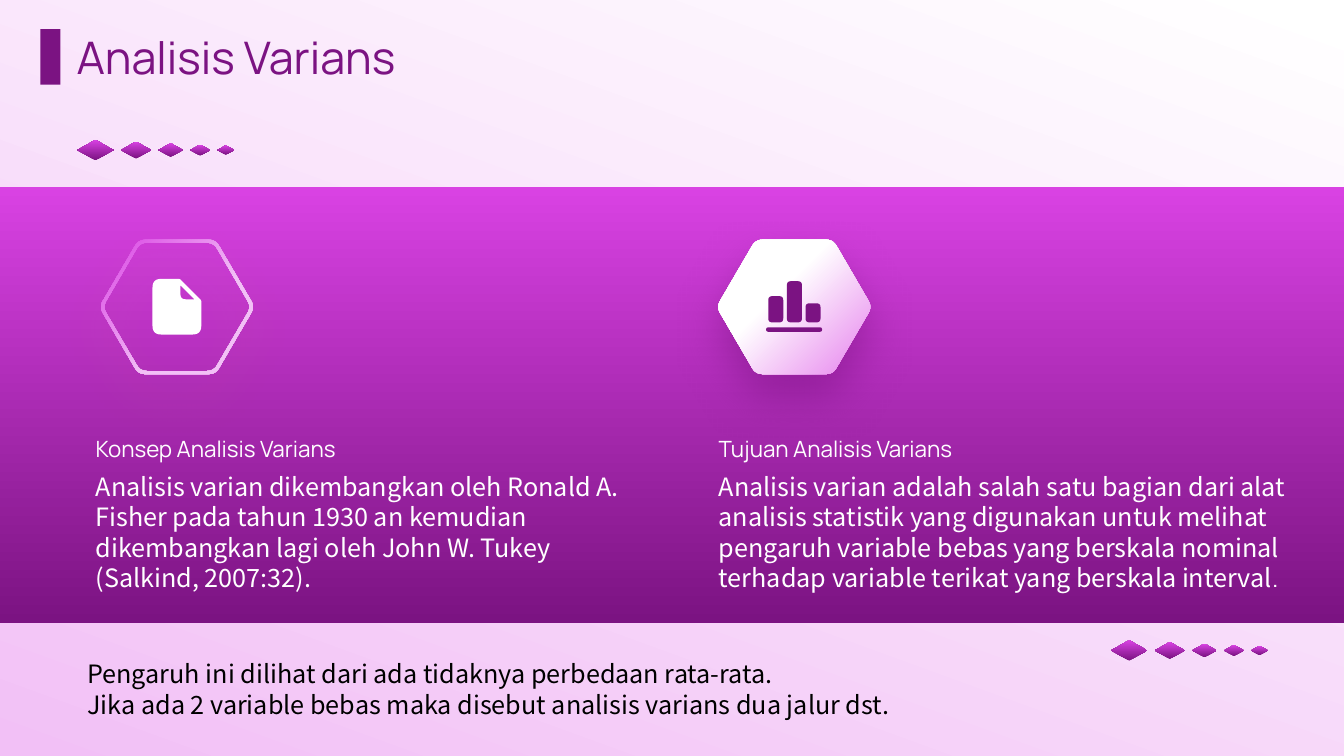
from dataclasses import dataclass

from lxml import etree
from pptx import Presentation
from pptx.dml.color import RGBColor
from pptx.enum.shapes import MSO_SHAPE
from pptx.enum.text import MSO_ANCHOR
from pptx.oxml.ns import qn
from pptx.util import Pt

RECT, DIAMOND = MSO_SHAPE.RECTANGLE, MSO_SHAPE.DIAMOND
TOP, MIDDLE, BOTTOM = MSO_ANCHOR.TOP, MSO_ANCHOR.MIDDLE, MSO_ANCHOR.BOTTOM
HEAD, BODY = "Manrope", "Noto Sans CJK SC"
DARK, PINK, PALE, WHITE, BLACK = "7B1382", "D942E3", "F2C0F6", "FFFFFF", "000000"
UNITS = 100  # outline units per point

Corner = tuple[float, float, float]  # x, y, length cut off each side


@dataclass
class Topic:
    left: float
    width: float
    head: str
    body: str
    tail: str = ""


TOPICS = [
    Topic(68.4, 377.3, "Konsep Analisis Varians",
          "Analisis varian dikembangkan oleh Ronald A. Fisher pada tahun 1930 an "
          "kemudian dikembangkan lagi oleh John W. Tukey (Salkind, 2007:32)."),
    Topic(513.4, 411.1, "Tujuan Analisis Varians",
          "Analisis varian adalah salah satu bagian dari alat analisis statistik "
          "yang digunakan untuk melihat pengaruh variable bebas yang berskala "
          "nominal terhadap variable terikat yang berskala interval", "."),
]
NOTE = ("Pengaruh ini dilihat dari ada tidaknya perbedaan rata-rata.\n"
        "Jika ada 2 variable bebas maka disebut analisis varians dua jalur dst.")


def rgb(code: str) -> RGBColor:
    return RGBColor.from_string(code)


def solid(shape, code: str) -> None:
    shape.fill.solid()
    shape.fill.fore_color.rgb = rgb(code)


def blend(shape, stops: list, angle: float = 90) -> None:
    """Linear gradient; the angle runs counter-clockwise."""
    shape.fill.gradient()
    shape.fill.gradient_angle = angle
    for stop, (place, code) in zip(shape.fill.gradient_stops, stops):
        stop.position = place
        stop.color.rgb = rgb(code)


def glow(shape, stops: list, focus: dict) -> None:
    """Round gradient that starts in the corner given by focus."""
    blend(shape, stops)
    grad = shape._element.spPr.find(qn("a:gradFill"))
    grad.remove(grad.find(qn("a:lin")))
    ring = etree.SubElement(grad, qn("a:path"), {"path": "circle"})
    etree.SubElement(ring, qn("a:fillToRect"), focus)


def shade(shape, code: str, alpha: int) -> None:
    """Soft shadow below the shape."""
    effects = shape._element.spPr.find(qn("a:effectLst"))
    drop = etree.SubElement(effects, qn("a:outerShdw"), {
        "blurRad": str(Pt(30)), "dist": str(Pt(16)), "dir": "5400000",
        "algn": "t", "rotWithShape": "0"})
    tint = etree.SubElement(drop, qn("a:srgbClr"), {"val": code})
    etree.SubElement(tint, qn("a:alpha"), {"val": str(alpha * 1000)})


def plain(shape):
    shape.shadow.inherit = False
    shape.line.fill.background()
    return shape


def block(slide, kind, left: float, top: float, width: float, height: float):
    return plain(slide.shapes.add_shape(
        kind, Pt(left), Pt(top), Pt(width), Pt(height)))


def bend(corners: list[Corner], steps: int = 6) -> list:
    """Points of a closed outline with rounded corners."""
    points = []
    for i, (x, y, cut) in enumerate(corners):
        ends = []
        for nx, ny, _ in (corners[i - 1], corners[(i + 1) % len(corners)]):
            part = cut / ((nx - x) ** 2 + (ny - y) ** 2) ** 0.5
            ends.append((x + (nx - x) * part, y + (ny - y) * part))
        (ax, ay), (bx, by) = ends
        for t in (k / steps for k in range(steps + 1)):
            a, m, b = (1 - t) ** 2, 2 * t * (1 - t), t * t
            points.append((round(UNITS * (a * ax + m * x + b * bx)),
                           round(UNITS * (a * ay + m * y + b * by))))
    return points


def draw(slide, outlines: list[list[Corner]]):
    first, *rest = [bend(outline) for outline in outlines]
    pen = slide.shapes.build_freeform(*first[0], scale=Pt(1) / UNITS)
    pen.add_line_segments(first[1:], close=True)
    for points in rest:
        pen.move_to(*points[0])
        pen.add_line_segments(points[1:], close=True)
    return plain(pen.convert_to_shape())


def hexagon(mid: float, scale: float = 1) -> list[Corner]:
    spots = [(-55.5, 0), (-27.5, -48), (27.5, -48),
             (55.5, 0), (27.5, 48), (-27.5, 48)]
    return [(mid + x * scale, 219.2 + y * scale, 5) for x, y in spots]


def box(left: float, top: float, right: float, low: float, cut: float) -> list[Corner]:
    return [(left, top, cut), (right, top, cut), (right, low, cut), (left, low, cut)]


def write(slide, left: float, top: float, width: float, height: float, text: str,
          size: float, font: str, code: str, anchor=TOP, pad: bool = False,
          tail: str = "") -> None:
    frame = slide.shapes.add_textbox(
        Pt(left), Pt(top), Pt(width), Pt(height)).text_frame
    frame.word_wrap = True
    frame.vertical_anchor = anchor
    if not pad:
        frame.margin_left = frame.margin_right = 0
        frame.margin_top = frame.margin_bottom = 0
    frame.text = text
    if tail:
        frame.paragraphs[-1].add_run().text = tail
    for para in frame.paragraphs:
        if font == BODY:
            para.line_spacing = Pt(21.8)
        for i, run in enumerate(para.runs):
            run.font.size = Pt(size)
            run.font.name = HEAD if i else font
            run.font.color.rgb = rgb(code)


def trail(slide, left: float, mid: float) -> None:
    """Row of shrinking diamonds."""
    for width in (26, 21.6, 17.5, 14.2, 12):
        high = width * 0.56
        gem = block(slide, DIAMOND, left, mid - high / 2, width, high)
        blend(gem, [(0, DARK), (1, PINK)])
        left += width + 5.2


def icons(slide) -> None:
    ring = draw(slide, [hexagon(126.4), hexagon(126.4, 0.955)[::-1]])
    glow(ring, [(0.39, PALE), (1, PINK)], {"l": "100000", "t": "100000"})
    shade(ring, "FFE838", 20)
    page = [(108.9, 199.2, 6.3), (128.4, 199.2, 1), (143.8, 214.6, 1),
            (143.8, 239, 6.3), (108.9, 239, 6.3)]
    fold = [(128.9, 203.8, 0), (128.9, 213.8, 3.6), (138.9, 213.8, 0)]
    solid(draw(slide, [page, fold]), WHITE)

    tile = draw(slide, [hexagon(567.4)])
    glow(tile, [(0.39, WHITE), (1, "E681ED")], {"r": "100000", "b": "100000"})
    shade(tile, DARK, 50)
    bars = [box(left, top, left + 10.7, 230.3, 2.9)
            for left, top in ((548.8, 211.6), (562.1, 200.9), (575.4, 216.7))]
    solid(draw(slide, bars + [box(547.3, 233.9, 587.2, 237, 1.5)]), DARK)


def main() -> None:
    deck = Presentation()
    deck.slide_width, deck.slide_height = Pt(960), Pt(540)
    slide = deck.slides.add_slide(deck.slide_layouts[6])

    blend(block(slide, RECT, 0, 0, 960, 540), [(0, PALE), (0.99, WHITE)], 70)
    blend(block(slide, RECT, 0, 133.4, 960, 311.6), [(0, DARK), (1, PINK)])
    trail(slide, 55.2, 107.2)
    trail(slide, 793.6, 464.6)
    icons(slide)
    for topic in TOPICS:
        write(slide, topic.left, 281.5, 377.3, 48.2, topic.head, 16, HEAD, WHITE, BOTTOM)
        write(slide, topic.left, 336.2, topic.width, 74.2, topic.body, 18, BODY, WHITE,
              tail=topic.tail)
    write(slide, 54.7, 23.8, 838, 33.8, "Analisis Varians", 32, HEAD, DARK, MIDDLE)
    solid(block(slide, RECT, 28.8, 20.9, 14.4, 39.6), DARK)
    write(slide, 55.4, 466.6, 712.8, 51, NOTE, 18, BODY, BLACK, pad=True)
    deck.save("out.pptx")


if __name__ == "__main__":
    main()
